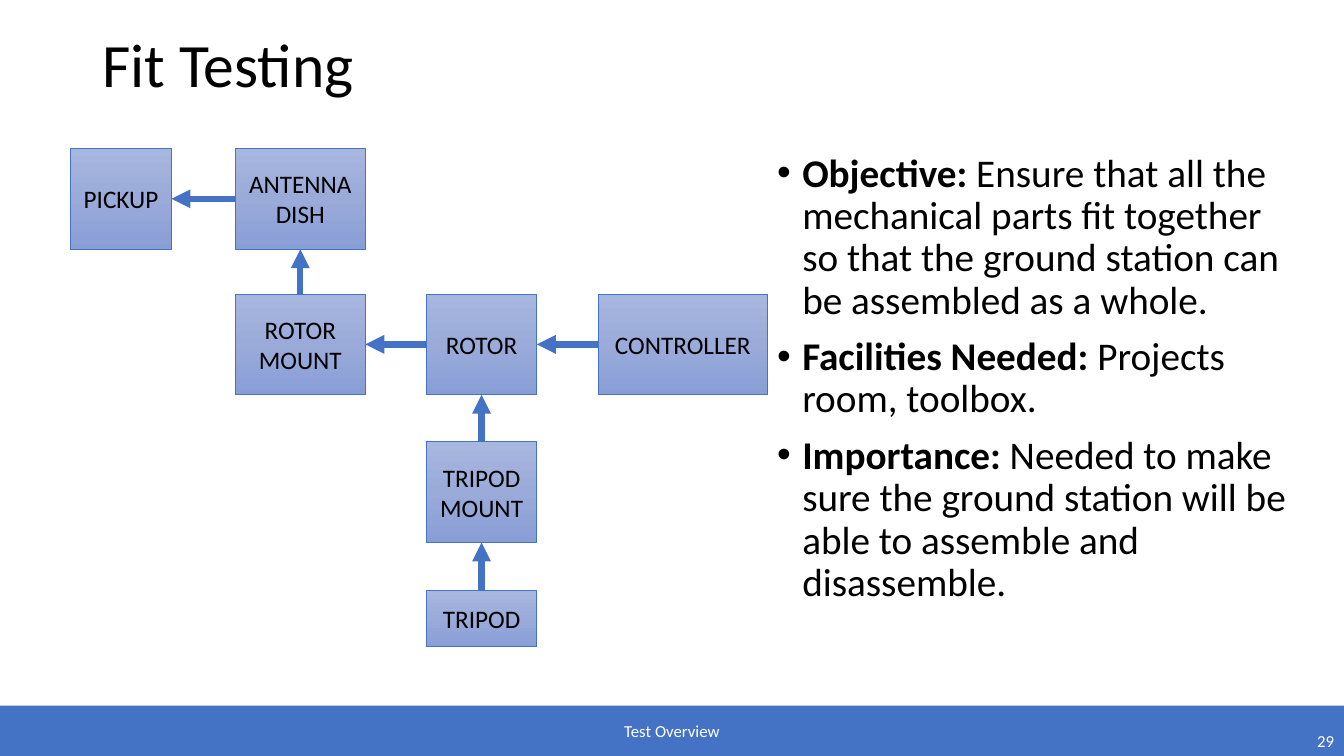
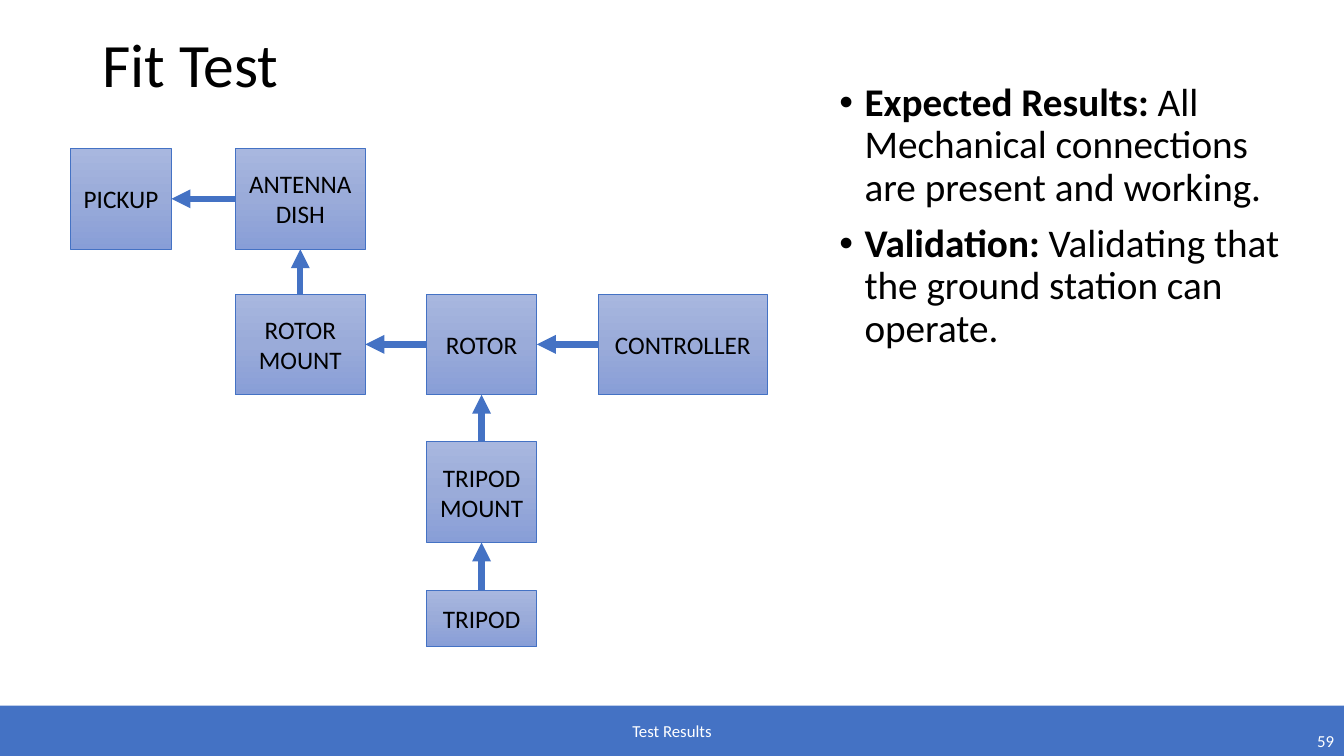
from copy import deepcopy
from dataclasses import dataclass

from lxml.etree import SubElement
from pptx import Presentation
from pptx.dml.color import RGBColor
from pptx.enum.shapes import MSO_CONNECTOR, MSO_SHAPE
from pptx.enum.text import MSO_ANCHOR, PP_ALIGN
from pptx.oxml.ns import qn
from pptx.util import Pt


@dataclass(frozen=True)
class Theme:
    """Colours, font and type sizes shared by all slides."""

    font: str = "Calibri"
    ink: RGBColor = RGBColor.from_string("000000")
    paper: RGBColor = RGBColor.from_string("FFFFFF")
    accent: RGBColor = RGBColor.from_string("4472C4")
    part_gradient: tuple = ((0, "A8B7DF"), (0.5, "9AABD9"), (1, "889ED7"))
    title_size: int = 44
    body_size: int = 28
    part_size: int = 18
    footer_size: int = 12


THEME = Theme()
PAGE_WIDTH, PAGE_HEIGHT = 960, 540
BAND_HEIGHT = 36
TOP, RIGHT_SIDE, BOTTOM, LEFT = 0, 3, 2, 1

PARTS = {
    "TRIPOD": (304.5, 422, 79, 40),
    "TRIPOD MOUNT": (304.5, 315.5, 79, 72),
    "ROTOR": (304.5, 210, 79, 72),
    "CONTROLLER": (427.5, 210, 120.5, 72),
    "ROTOR MOUNT": (168, 210, 93, 72),
    "ANTENNA DISH": (168, 106, 93, 72),
    "PICKUP": (50.5, 106, 72, 72),
}

LINKS = [
    ("TRIPOD", TOP, "TRIPOD MOUNT", BOTTOM),
    ("TRIPOD MOUNT", TOP, "ROTOR", BOTTOM),
    ("CONTROLLER", LEFT, "ROTOR", RIGHT_SIDE),
    ("ROTOR", LEFT, "ROTOR MOUNT", RIGHT_SIDE),
    ("ROTOR MOUNT", TOP, "ANTENNA DISH", BOTTOM),
    ("ANTENNA DISH", LEFT, "PICKUP", RIGHT_SIDE),
]

SLIDES = [
    {
        "title": "Fit Testing",
        "section": "Test Overview",
        "number": "29",
        "body_area": (548, 106, 385, 381),
        "points": [
            ("Objective:", "Ensure that all the mechanical parts fit together "
             "so that the ground station can be assembled as a whole."),
            ("Facilities Needed:", "Projects room, toolbox."),
            ("Importance:", "Needed to make sure the ground station will be "
             "able to assemble and disassemble."),
        ],
    },
    {
        "title": "Fit Test",
        "section": "Test Results",
        "number": "59",
        "body_area": (592.5, 55.5, 346.5, 381),
        "points": [
            ("Expected Results:", "All Mechanical connections are present and working."),
            ("Validation:", "Validating that the ground station can operate."),
        ],
    },
]


def in_points(area):
    """Turn plain numbers into lengths."""
    return [Pt(value) for value in area]


def set_font(para, size, color):
    """Give a paragraph the theme font in one size and colour."""
    para.font.name = THEME.font
    para.font.size = Pt(size)
    para.font.color.rgb = color


def write_line(shape, text, size, color, align):
    """Put one vertically centred paragraph in a shape."""
    frame = shape.text_frame
    frame.word_wrap = True
    frame.vertical_anchor = MSO_ANCHOR.MIDDLE
    para = frame.paragraphs[0]
    para.text = text
    para.alignment = align
    set_font(para, size, color)
    return para


def add_rectangle(page, area):
    """Add a rectangle without a shadow."""
    box = page.shapes.add_shape(MSO_SHAPE.RECTANGLE, *in_points(area))
    box.shadow.inherit = False
    return box


def add_title(page, text):
    """Add the slide title."""
    box = page.shapes.add_textbox(*in_points((66, 1.5, 828, 94)))
    para = write_line(box, text, THEME.title_size, THEME.ink, PP_ALIGN.LEFT)
    para.line_spacing = 0.9


def add_footer(page, section, number):
    """Add the bottom band with section name and slide number."""
    band = add_rectangle(
        page, (0, PAGE_HEIGHT - BAND_HEIGHT, PAGE_WIDTH, BAND_HEIGHT))
    band.fill.solid()
    band.fill.fore_color.rgb = THEME.accent
    band.line.fill.background()
    write_line(band, section, THEME.footer_size, THEME.paper, PP_ALIGN.CENTER)
    box = page.shapes.add_textbox(*in_points((PAGE_WIDTH - 216, 518, 216, 22)))
    write_line(box, number, THEME.footer_size, THEME.paper, PP_ALIGN.RIGHT)


def add_bullet(para):
    """Give a paragraph a hanging bullet."""
    properties = para._p.get_or_add_pPr()
    properties.set("marL", str(Pt(18)))
    properties.set("indent", str(Pt(-18)))
    SubElement(properties, qn("a:buFont")).set("typeface", "Arial")
    SubElement(properties, qn("a:buChar")).set("char", "•")


def add_points(page, area, points):
    """Add a bulleted list of points with bold labels."""
    frame = page.shapes.add_textbox(*in_points(area)).text_frame
    frame.word_wrap = True
    for index, (label, detail) in enumerate(points):
        para = frame.add_paragraph() if index else frame.paragraphs[0]
        add_bullet(para)
        para.line_spacing = 0.9
        para.space_before = Pt(10 if index else 0)
        set_font(para, THEME.body_size, THEME.ink)
        span = para.add_run()
        span.text = label
        span.font.bold = True
        para.add_run().text = f" {detail}"


def fill_gradient(box):
    """Fill a box with the theme gradient from top to bottom."""
    box.fill.gradient()
    box.fill.gradient_angle = 270
    stop_list = box._element.spPr.find(".//" + qn("a:gsLst"))
    stop_list.insert(1, deepcopy(stop_list[0]))
    for stop, (position, color) in zip(box.fill.gradient_stops, THEME.part_gradient):
        stop.position = position
        stop.color.rgb = RGBColor.from_string(color)


def add_part(page, name, area):
    """Add one labelled part of the ground station."""
    box = add_rectangle(page, area)
    fill_gradient(box)
    box.line.color.rgb = THEME.accent
    box.line.width = Pt(0.5)
    write_line(box, name, THEME.part_size, THEME.ink, PP_ALIGN.CENTER)
    return box


def add_arrow(page, start, start_side, end, end_side):
    """Join two parts with an arrow."""
    arrow = page.shapes.add_connector(MSO_CONNECTOR.STRAIGHT, 0, 0, 0, 0)
    arrow.begin_connect(start, start_side)
    arrow.end_connect(end, end_side)
    arrow.line.color.rgb = THEME.accent
    arrow.line.width = Pt(4.5)
    SubElement(arrow.line._get_or_add_ln(), qn("a:tailEnd")).set("type", "triangle")
    SubElement(arrow._element.spPr, qn("a:effectLst"))


def add_assembly(page):
    """Draw the ground station parts and how they join."""
    boxes = {name: add_part(page, name, area) for name, area in PARTS.items()}
    for start, start_side, end, end_side in LINKS:
        add_arrow(page, boxes[start], start_side, boxes[end], end_side)


def main():
    """Build and save the deck."""
    deck = Presentation()
    deck.slide_width, deck.slide_height = Pt(PAGE_WIDTH), Pt(PAGE_HEIGHT)
    for content in SLIDES:
        page = deck.slides.add_slide(deck.slide_layouts[6])
        add_title(page, content["title"])
        add_points(page, content["body_area"], content["points"])
        add_footer(page, content["section"], content["number"])
        add_assembly(page)
    deck.save("out.pptx")


if __name__ == "__main__":
    main()
